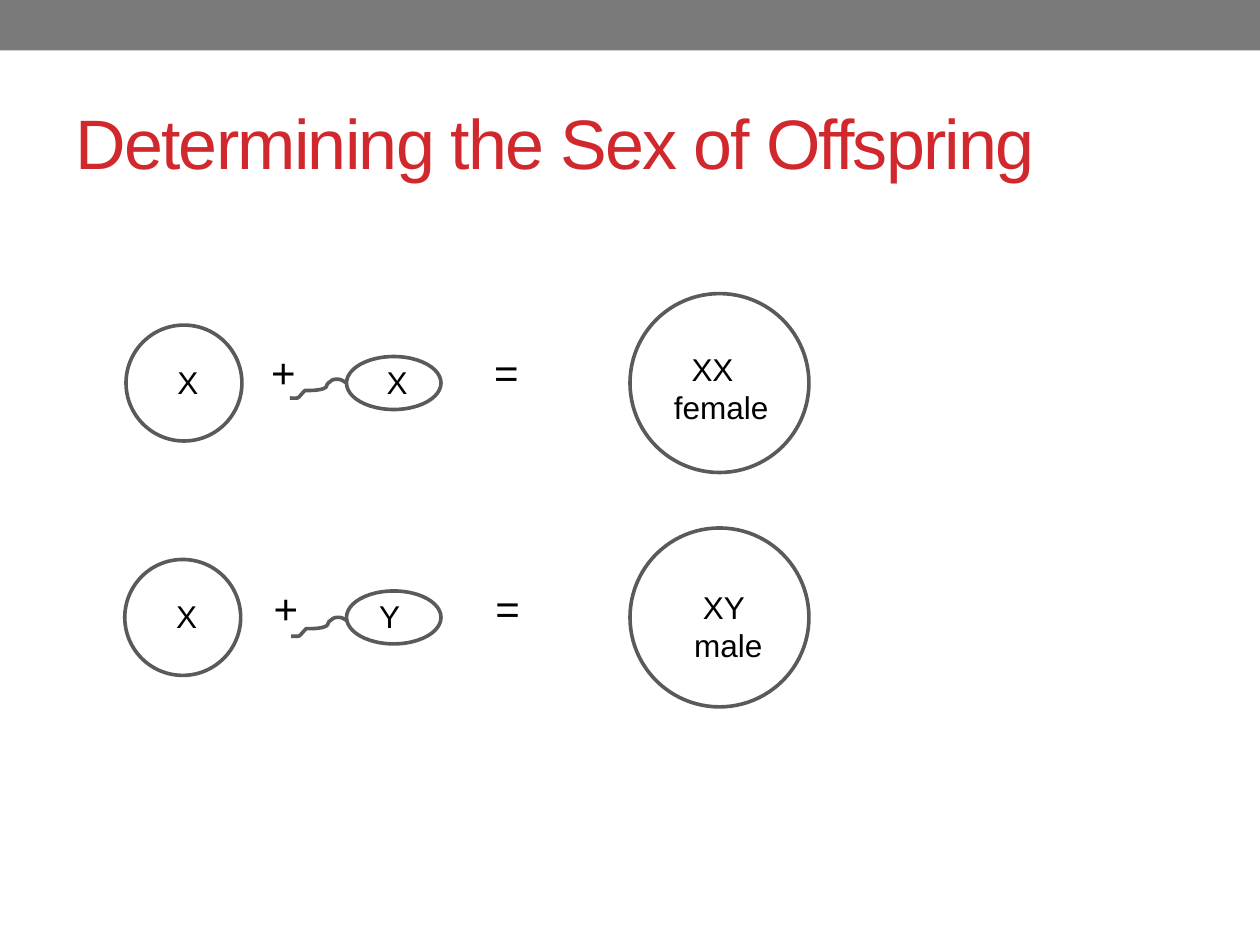
from pptx import Presentation
from pptx import util as u
from pptx.dml.color import RGBColor
from pptx.enum import shapes, text

FONT = "Arial"
OUTLINE = "5A5A5A"
BLACK = "000000"
TAIL_START = (0.45, 0.03)
TAIL_CURVES = [
    ((0.43, 0.02), (0.41, 0.00), (0.38, 0.00)),
    ((0.36, 0.00), (0.34, 0.00), (0.32, 0.02)),
    ((0.27, 0.05), (0.32, 0.06), (0.25, 0.08)),
    ((0.21, 0.09), (0.16, 0.09), (0.12, 0.09)),
    ((0.05, 0.16), (0.09, 0.15), (0.00, 0.15)),
]


def color(value):
    return RGBColor.from_string(value)


def add_preset(page, kind, left, top, width, height, fill, line=None):
    shape = page.shapes.add_shape(kind, *map(u.Inches, (left, top, width, height)))
    shape.shadow.inherit = False
    shape.fill.solid()
    shape.fill.fore_color.rgb = color(fill)
    if line:
        shape.line.color.rgb = color(line)
        shape.line.width = u.Pt(2.08)
    else:
        shape.line.fill.background()
    return shape


def add_cell(page, left, top, width, height):
    return add_preset(page, shapes.MSO_SHAPE.OVAL, left, top, width, height,
                      "FFFFFF", OUTLINE)


def add_text(page, lines, left, top, width, height, size, ink=BLACK,
             indents=(0, 0), spacing=0):
    box = page.shapes.add_textbox(*map(u.Inches, (left, top, width, height)))
    frame = box.text_frame
    frame.word_wrap = True
    frame.text = lines
    for para, indent in zip(frame.paragraphs, indents):
        if indent:
            para._p.get_or_add_pPr().set("marL", str(u.Inches(indent)))
        for span in para.runs:
            span.font.name = FONT
            span.font.size = u.Pt(size)
            span.font.color.rgb = color(ink)
            if spacing:
                span._r.get_or_add_rPr().set("spc", str(spacing * 100))
    return box


def add_symbol(page, sign, center_x, center_y):
    side = 0.5
    box = add_text(page, sign, center_x - side / 2, center_y - side / 2,
                   side, side, 24)
    box.text_frame.vertical_anchor = text.MSO_ANCHOR.MIDDLE
    box.text_frame.paragraphs[0].alignment = text.PP_ALIGN.CENTER


def curve_points(start, curves, steps=8):
    for first, second, end in curves:
        for step in range(1, steps + 1):
            t = step / steps
            weights = ((1 - t) ** 3, 3 * t * (1 - t) ** 2, 3 * t * t * (1 - t), t ** 3)
            corners = (start, first, second, end)
            yield tuple(sum(w * corner[axis] for w, corner in zip(weights, corners))
                        for axis in (0, 1))
        start = end


def add_tail(page, left, top):
    def place(point):
        return u.Inches(left + point[0]), u.Inches(top + point[1])

    builder = page.shapes.build_freeform(*place(TAIL_START))
    builder.add_line_segments(
        [place(point) for point in curve_points(TAIL_START, TAIL_CURVES)], close=False)
    tail = builder.convert_to_shape()
    tail.shadow.inherit = False
    tail.fill.background()
    tail.line.color.rgb = color(OUTLINE)
    tail.line.width = u.Pt(2.08)


def add_cross(page, middle, egg_left, tail, signs, sperm, offspring):
    plus_x, equals_x, sign_y = signs
    add_symbol(page, "+", plus_x, sign_y)
    add_symbol(page, "=", equals_x, sign_y)
    add_cell(page, egg_left, middle - 0.46, 0.92, 0.92)
    add_cell(page, 2.75, middle - 0.21, 0.75, 0.42)
    add_tail(page, *tail)
    add_cell(page, 5, middle - 0.71, 1.42, 1.42)

    add_text(page, "X", egg_left + 0.17, middle - 0.21, 0.58, 0.42, 18, indents=[0.14])
    letter, letter_left, letter_indent = sperm
    add_text(page, letter, letter_left, middle - 0.21, 0.58, 0.42, 18,
             indents=[letter_indent])
    lines, left, top, width, indents = offspring
    add_text(page, lines, left, top, width, 0.71, 18, indents=indents)


def main():
    deck = Presentation()
    deck.slide_width, deck.slide_height = u.Inches(10), u.Inches(7.5)
    page = deck.slides.add_slide(deck.slide_layouts[6])

    add_preset(page, shapes.MSO_SHAPE.RECTANGLE, 0, 0, 10, 0.4, "7A7A7A")
    title = add_text(page, "Determining the Sex of Offspring", 0.5, 0.58, 9, 1.08,
                     40, "D1282E", spacing=-1)
    title.text_frame.vertical_anchor = text.MSO_ANCHOR.MIDDLE

    add_cross(page, 3.04, 1, (2.3, 3.01), (2.25, 4.02, 2.95),
              ("X", 2.83, 0.14), ("XX\nfemale", 5.25, 2.73, 1, (0.14, 0)))
    add_cross(page, 4.9, 0.99, (2.31, 4.9), (2.27, 4.03, 4.82),
              ("Y", 2.91, 0), ("XY\nmale", 5.34, 4.62, 0.82, (0.14, 0.07)))
    deck.save("out.pptx")


if __name__ == "__main__":
    main()
